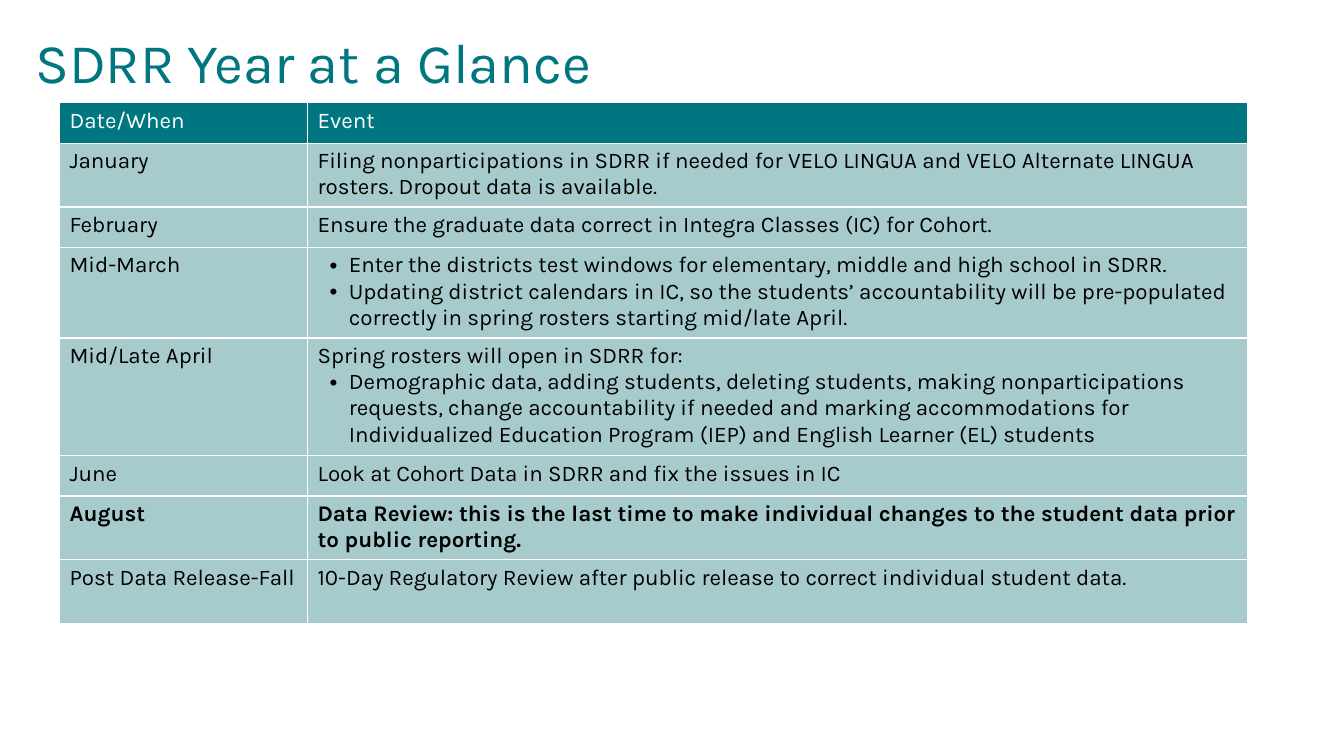
from lxml.etree import SubElement
from pptx import Presentation
from pptx.dml.color import RGBColor
from pptx.enum.text import MSO_ANCHOR
from pptx.oxml.ns import qn
from pptx.util import Inches, Pt

TEAL = RGBColor(0x00, 0x77, 0x80)
PALE_TEAL = RGBColor(0xA7, 0xCB, 0xCD)
WHITE = RGBColor(0xFF, 0xFF, 0xFF)
BLACK = RGBColor(0x00, 0x00, 0x00)
FONT = "Karla"
BULLET = "• "

# Row height, date, event paragraphs (a leading bullet marks a list item)
ROWS = [
    (0.4, "Date/When", ["Event"]),
    (0.63, "January", [
        "Filing nonparticipations in SDRR if needed for VELO LINGUA and VELO "
        "Alternate LINGUA rosters. Dropout data is available."]),
    (0.4, "February", [
        "Ensure the graduate data correct in Integra Classes (IC) for Cohort."]),
    (0.88, "Mid-March", [
        "• Enter the districts test windows for elementary, middle and high "
        "school in SDRR.",
        "• Updating district calendars in IC, so the students’ accountability "
        "will be pre-populated correctly in spring rosters starting mid/late April."]),
    (1.14, "Mid/Late April", [
        "Spring rosters will open in SDRR for:",
        "• Demographic data, adding students, deleting students, making "
        "nonparticipations requests, change accountability if needed and marking "
        "accommodations for Individualized Education Program (IEP) and English "
        "Learner (EL) students"]),
    (0.4, "June", ["Look at Cohort Data in SDRR and fix the issues in IC"]),
    (0.63, "August", [
        "Data Review: this is the last time to make individual changes to the "
        "student data prior to public reporting."]),
    (0.63, "Post Data Release-Fall", [
        "10-Day Regulatory Review after public release to correct individual "
        "student data."]),
]


def add_run(paragraph, text, size, color, bold=False):
    run = paragraph.add_run()
    run.text = text
    run.font.name = FONT
    run.font.size = Pt(size)
    run.font.bold = bold
    run.font.color.rgb = color


def style_cell(cell, fill_color):
    properties = cell._tc.get_or_add_tcPr()
    for side in ("a:lnL", "a:lnR", "a:lnT", "a:lnB"):
        line = SubElement(properties, qn(side), w=str(Pt(1)))
        line_fill = SubElement(line, qn("a:solidFill"))
        SubElement(line_fill, qn("a:srgbClr"), val=str(WHITE))
    cell.fill.solid()
    cell.fill.fore_color.rgb = fill_color


presentation = Presentation()
presentation.slide_width = Inches(13.33)
presentation.slide_height = Inches(7.5)
slide = presentation.slides.add_slide(presentation.slide_layouts[6])

# Title
title = slide.shapes.add_textbox(Inches(0), Inches(0), Inches(11.5), Inches(1.3))
title.text_frame.word_wrap = True
title.text_frame.vertical_anchor = MSO_ANCHOR.MIDDLE
title.text_frame.margin_left = Inches(0.35)
paragraph = title.text_frame.paragraphs[0]
paragraph.line_spacing = 0.9
add_run(paragraph, "SDRR Year at a Glance", 40, TEAL)

# Calendar table
table = slide.shapes.add_table(
    len(ROWS), 2, Inches(0.59), Inches(1.02), Inches(11.78), Inches(5.11)).table
table.columns[0].width = Inches(2.46)
table.columns[1].width = Inches(9.32)

for row_index, (height, date, events) in enumerate(ROWS):
    table.rows[row_index].height = Inches(height)
    is_header = row_index == 0
    for column_index, texts in enumerate(([date], events)):
        cell = table.cell(row_index, column_index)
        style_cell(cell, TEAL if is_header else PALE_TEAL)
        for text_index, text in enumerate(texts):
            frame = cell.text_frame
            paragraph = frame.add_paragraph() if text_index else frame.paragraphs[0]
            if text.startswith(BULLET):
                indents = paragraph._p.get_or_add_pPr()
                indents.set("marL", str(Inches(0.31)))
                indents.set("indent", str(Inches(-0.19)))
                SubElement(indents, qn("a:buFont"), typeface="Arial")
                SubElement(indents, qn("a:buChar"), char=BULLET.strip())
            add_run(paragraph, text.removeprefix(BULLET), 16,
                    WHITE if is_header else BLACK, bold=date == "August")

presentation.save("out.pptx")
